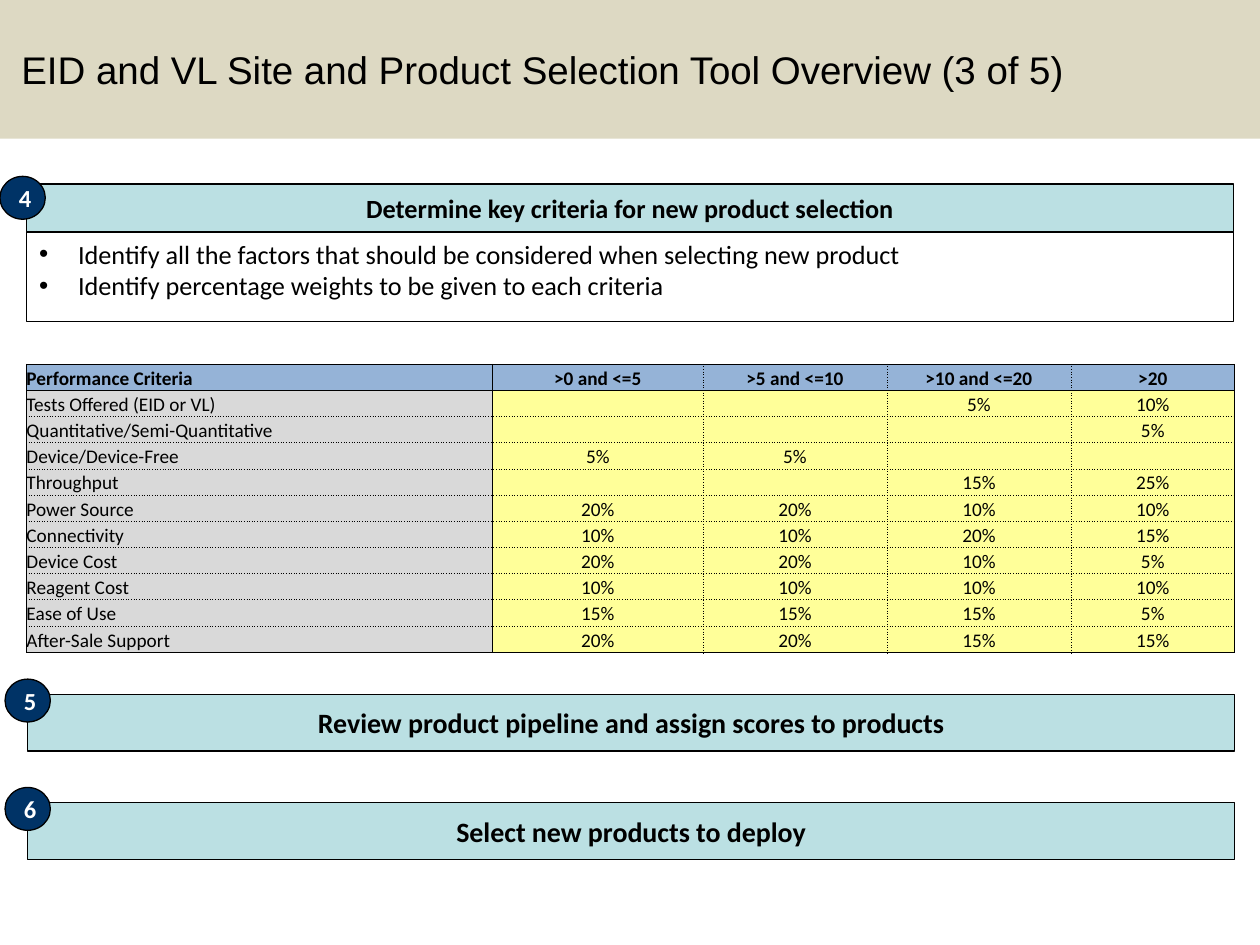
from lxml import etree
from pptx import Presentation
from pptx import util as u
from pptx.dml.color import RGBColor
from pptx.enum import shapes, text
from pptx.oxml import ns

COLORS = {"banner": "DDD9C3", "heading": "BBE0E3", "badge": "003366", "header": "95B3D7",
          "label": "D9D9D9", "value": "FFFF99", "ink": "000000", "paper": "FFFFFF"}
TITLE = "EID and VL Site and Product Selection Tool Overview (3 of 5)"
BULLETS = ["Identify all the factors that should be considered when selecting new product",
           "Identify percentage weights to be given to each criteria"]
# number, heading, heading box, text size, badge left and top
STEPS = [
    ("4", "Determine key criteria for new product selection", (0.21, 1.46, 9.58, 0.38), 15, (0, 1.4)),
    ("5", "Review product pipeline and assign scores to products", (0.22, 5.51, 9.58, 0.45), 16, (0.04, 5.39)),
    ("6", "Select new products to deploy", (0.22, 6.37, 9.58, 0.45), 16, (0.04, 6.25)),
]
CRITERIA = [
    ("Performance Criteria", ">0 and <=5", ">5 and <=10", ">10 and <=20", ">20"),
    ("Tests Offered (EID or VL)", "", "", "5%", "10%"),
    ("Quantitative/Semi-Quantitative", "", "", "", "5%"),
    ("Device/Device-Free", "5%", "5%", "", ""),
    ("Throughput", "", "", "15%", "25%"),
    ("Power Source", "20%", "20%", "10%", "10%"),
    ("Connectivity", "10%", "10%", "20%", "15%"),
    ("Device Cost", "20%", "20%", "10%", "5%"),
    ("Reagent Cost", "10%", "10%", "10%", "10%"),
    ("Ease of Use", "15%", "15%", "15%", "5%"),
    ("After-Sale Support", "20%", "20%", "15%", "15%"),
]
COLUMN_WIDTHS = (3.7, 1.67, 1.46, 1.46, 1.3)
TABLE_BOX = (0.21, 2.89, 9.58, 2.29)
CENTER, LEFT = text.PP_ALIGN.CENTER, text.PP_ALIGN.LEFT
MIDDLE, TOP = text.MSO_ANCHOR.MIDDLE, text.MSO_ANCHOR.TOP


def color(name):
    return RGBColor.from_string(COLORS[name])


def assign(target, values):
    for name, value in values.items():
        setattr(target, name, value)


def place(shape, box):
    sides = ("left", "top", "width", "height")
    assign(shape, dict(zip(sides, map(u.Inches, box))))


def paint(shape, fill, line="ink"):
    shape.fill.solid()
    shape.fill.fore_color.rgb = color(fill)
    if line:
        shape.line.color.rgb = color(line)
        shape.line.width = u.Pt(0.75)


def write(para, words, size, align=LEFT, font="Calibri", ink="ink", bold=False):
    para.alignment = align
    span = para.add_run()
    span.text = words
    assign(span.font, {"size": u.Pt(size), "name": font, "bold": bold})
    span.font.color.rgb = color(ink)


def indent(para, left, first, bullet=None):
    """Set the left and first-line indents, in inches, and the bullet if there is one."""
    props = para._p.get_or_add_pPr()
    props.set("marL", str(u.Inches(left)))
    props.set("indent", str(u.Inches(first)))
    if bullet:
        etree.SubElement(props, ns.qn("a:buFont"), typeface="Arial")
        etree.SubElement(props, ns.qn("a:buChar"), char=bullet)


def add_label(page, kind, box, fill, words, size, ink="ink", margin=0.1):
    shape = page.shapes.add_shape(kind, *map(u.Inches, box))
    shape.shadow.inherit = False
    paint(shape, fill)
    assign(shape.text_frame, {"vertical_anchor": MIDDLE, "word_wrap": True,
                              "margin_left": u.Inches(margin), "margin_right": 0 if margin < 0.1 else u.Inches(margin)})
    write(shape.text_frame.paragraphs[0], words, size, CENTER, ink=ink, bold=True)


def add_border(cell, side, dotted):
    line = etree.SubElement(cell._tc.get_or_add_tcPr(), ns.qn("a:ln" + side), w=str(u.Pt(0.5)))
    fill = etree.SubElement(line, ns.qn("a:solidFill"))
    etree.SubElement(fill, ns.qn("a:srgbClr"), val=COLORS["ink"])
    etree.SubElement(line, ns.qn("a:prstDash"), val="dot" if dotted else "solid")


def add_criteria_table(page):
    rows, columns = len(CRITERIA), len(COLUMN_WIDTHS)
    frame = page.shapes.add_table(rows, columns, *map(u.Inches, TABLE_BOX))
    table = frame.table
    assign(table, {"first_row": False, "horz_banding": False})
    for column, width in zip(table.columns, COLUMN_WIDTHS):
        column.width = u.Inches(width)
    for r, values in enumerate(CRITERIA):
        table.rows[r].height = u.Inches(TABLE_BOX[3] / rows)
        for c, words in enumerate(values):
            cell = table.cell(r, c)
            assign(cell, {"margin_left": 0, "margin_right": 0, "margin_top": 0, "margin_bottom": 0,
                          "vertical_anchor": text.MSO_ANCHOR.BOTTOM})
            # Solid around the table, the header row and the label column
            add_border(cell, "L", c > 1)
            add_border(cell, "R", 0 < c < columns - 1)
            add_border(cell, "T", r > 1)
            add_border(cell, "B", 0 < r < rows - 1)
            paint(cell, "header" if r == 0 else "value" if c else "label", line=None)
            para = cell.text_frame.paragraphs[0]
            if words:
                write(para, words, 11, CENTER if c else LEFT, bold=r == 0)
            else:
                etree.SubElement(para._p, ns.qn("a:endParaRPr"), sz="1100")


def main():
    deck = Presentation()
    assign(deck, {"slide_width": u.Inches(10), "slide_height": u.Inches(7.5)})
    page = deck.slides.add_slide(deck.slide_layouts[1])
    title, body = page.placeholders

    place(title, (0, 0, 10, 1.1))
    paint(title, "banner", line=None)
    assign(title.text_frame, {"vertical_anchor": MIDDLE, "auto_size": text.MSO_AUTO_SIZE.NONE})
    heading = title.text_frame.paragraphs[0]
    write(heading, TITLE, 22, font="Arial")
    indent(heading, 0.06, 0.01)

    place(body, (0.21, 1.84, 9.58, 0.71))
    paint(body, "paper")
    assign(body.text_frame, {"vertical_anchor": TOP, "auto_size": text.MSO_AUTO_SIZE.NONE})
    for i, words in enumerate(BULLETS):
        para = body.text_frame.add_paragraph() if i else body.text_frame.paragraphs[0]
        para.space_before = u.Pt(0)
        write(para, words, 15)
        indent(para, 0.31, -0.31, "•")

    add_criteria_table(page)
    for number, words, box, size, corner in STEPS:
        add_label(page, shapes.MSO_SHAPE.RECTANGLE, box, "heading", words, size)
        add_label(page, shapes.MSO_SHAPE.OVAL, (*corner, 0.36, 0.34), "badge", number, 14, "paper", 0.04)
    deck.save("out.pptx")


if __name__ == "__main__":
    main()
